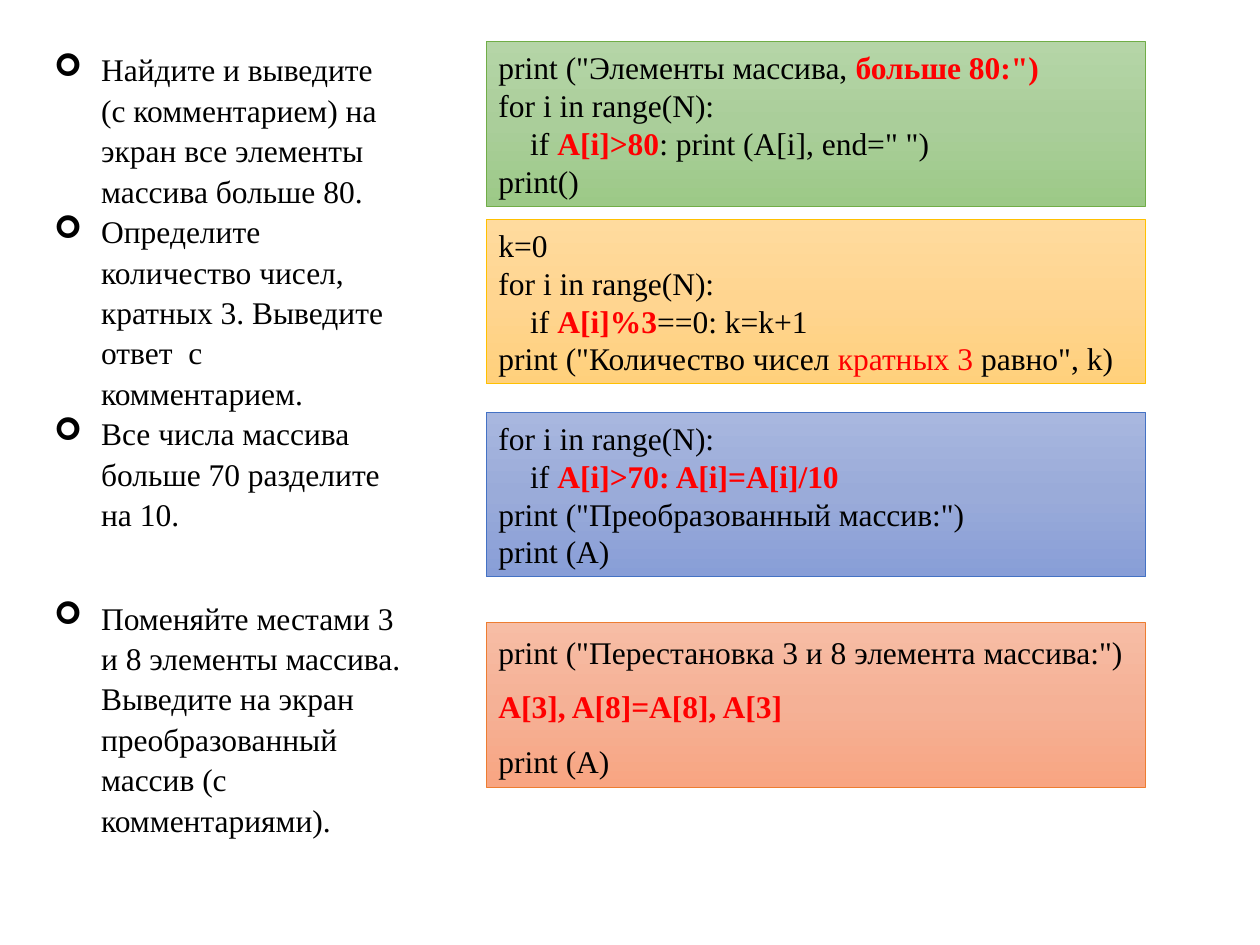
from lxml import etree
from pptx import Presentation
from pptx.dml.color import RGBColor
from pptx.enum.shapes import MSO_SHAPE
from pptx.enum.text import MSO_ANCHOR, PP_ALIGN
from pptx.oxml.ns import qn
from pptx.util import Cm, Pt

RECTANGLE = MSO_SHAPE.RECTANGLE
MIDDLE = MSO_ANCHOR.MIDDLE
LEFT = PP_ALIGN.LEFT

FONT, SIZE = "Times New Roman", Pt(18)
COLORS = {"text": "000000", "accent": "FF0000"}
LINE_SPACING = 1.07

# (text, space before in points)
TASKS = [
    ("Найдите и выведите (с комментарием) на экран все элементы массива больше 80.", 0),
    ("Определите количество чисел, кратных 3. Выведите ответ  с комментарием.", 0),
    ("Все числа массива больше 70 разделите на 10.", 0),
    ("Поменяйте местами 3 и 8 элементы массива. Выведите на экран "
     "преобразованный массив (с комментариями).", 36),
]

# A line is (indent level, spans); a span is (text, style).
PLAIN, RED, BOLD_RED = ("text", False), ("accent", False), ("accent", True)
LOOP = (0, [("for i in range(N):", PLAIN)])
PRINT_ARRAY = (0, [("print (A)", PLAIN)])
CODE_BOXES = [
    {"top": 0.84, "fill": ("B5D5A7", "AACE9A", "9CC987"), "line": "70AD47", "spaced": False,
     "code": [
         (0, [('print ("Элементы массива, ', PLAIN), ('больше 80:")', BOLD_RED)]),
         LOOP,
         (1, [("if ", PLAIN), ("A[i]>80", BOLD_RED), (': print (A[i], end=" ")', PLAIN)]),
         (0, [("print()", PLAIN)]),
     ]},
    {"top": 4.42, "fill": ("FFDB9E", "FFD590", "FFD07C"), "line": "FFC000", "spaced": False,
     "code": [
         (0, [("k=0", PLAIN)]),
         LOOP,
         (1, [("if ", PLAIN), ("A[i]%3", BOLD_RED), ("==0: k=k+1", PLAIN)]),
         (0, [('print ("Количество чисел ', PLAIN), ("кратных 3", RED), (' равно", k)', PLAIN)]),
     ]},
    {"top": 8.31, "fill": ("A8B7DF", "9AABD9", "889ED7"), "line": "4472C4", "spaced": False,
     "code": [
         LOOP,
         (1, [("if ", PLAIN), ("A[i]>70: A[i]=A[i]/10", BOLD_RED)]),
         (0, [('print ("Преобразованный массив:")', PLAIN)]),
         PRINT_ARRAY,
     ]},
    {"top": 12.55, "fill": ("F7BDA5", "F5B196", "F8A582"), "line": "ED7D31", "spaced": True,
     "code": [
         (0, [('print ("Перестановка 3 и 8 элемента массива:")', PLAIN)]),
         (0, [("A[3], A[8]=A[8], A[3]", BOLD_RED)]),
         PRINT_ARRAY,
     ]},
]
BOX_LEFT, BOX_WIDTH, BOX_HEIGHT = Cm(9.8), Cm(13.3), Cm(3.32)
CODE_INDENT, BULLET_INDENT = Cm(0.64), Cm(0.95)


def paragraph_at(frame, index):
    return frame.paragraphs[0] if index == 0 else frame.add_paragraph()


def add_span(para, text, style):
    color, bold = style
    span = para.add_run()
    span.text = text
    span.font.name, span.font.size, span.font.bold = FONT, SIZE, bold
    span.font.color.rgb = RGBColor.from_string(COLORS[color])


def set_indent(para, margin, first_line):
    properties = para._p.get_or_add_pPr()
    properties.set("marL", str(margin))
    properties.set("indent", str(first_line))
    return properties


def fill_gradient(shape, colors):
    """Fill from top to bottom with evenly spaced colour stops."""
    shape.fill.gradient()
    shape.fill.gradient_angle = 270
    stops = shape._element.spPr.find(qn("a:gradFill")).find(qn("a:gsLst"))
    for stop in list(stops):
        stops.remove(stop)
    for index, color in enumerate(colors):
        position = index * 100000 // (len(colors) - 1)
        stop = etree.SubElement(stops, qn("a:gs"), pos=str(position))
        etree.SubElement(stop, qn("a:srgbClr"), val=color)


def add_tasks(slide):
    box = slide.shapes.add_textbox(Cm(0.84), Cm(0.84), Cm(7.52), Cm(16.36))
    frame = box.text_frame
    frame.word_wrap = True
    for index, (text, space_before) in enumerate(TASKS):
        para = paragraph_at(frame, index)
        para.line_spacing = LINE_SPACING
        para.space_before = Pt(space_before)
        properties = set_indent(para, BULLET_INDENT, -BULLET_INDENT)
        etree.SubElement(properties, qn("a:buFont"), typeface="Wingdings")
        etree.SubElement(properties, qn("a:buChar"), char="➢")
        add_span(para, text, PLAIN)


def add_code_box(slide, spec_top, fill, line, spaced, code):
    box = slide.shapes.add_shape(RECTANGLE, BOX_LEFT, Cm(spec_top), BOX_WIDTH, BOX_HEIGHT)
    box.shadow.inherit = False
    fill_gradient(box, fill)
    box.line.color.rgb = RGBColor.from_string(line)
    box.line.width = Pt(0.5)
    frame = box.text_frame
    frame.word_wrap = True
    frame.vertical_anchor = MIDDLE
    for index, (level, spans) in enumerate(code):
        para = paragraph_at(frame, index)
        para.alignment = LEFT
        if spaced:
            para.line_spacing = LINE_SPACING
            para.space_after = Pt(8)
        if level:
            set_indent(para, level * CODE_INDENT, 0)
        for text, style in spans:
            add_span(para, text, style)


deck = Presentation()
deck.slide_width, deck.slide_height = Cm(25.4), Cm(19.05)
page = deck.slides.add_slide(deck.slide_layouts[6])
add_tasks(page)
for item in CODE_BOXES:
    add_code_box(page, item["top"], item["fill"], item["line"], item["spaced"], item["code"])
deck.save("out.pptx")
